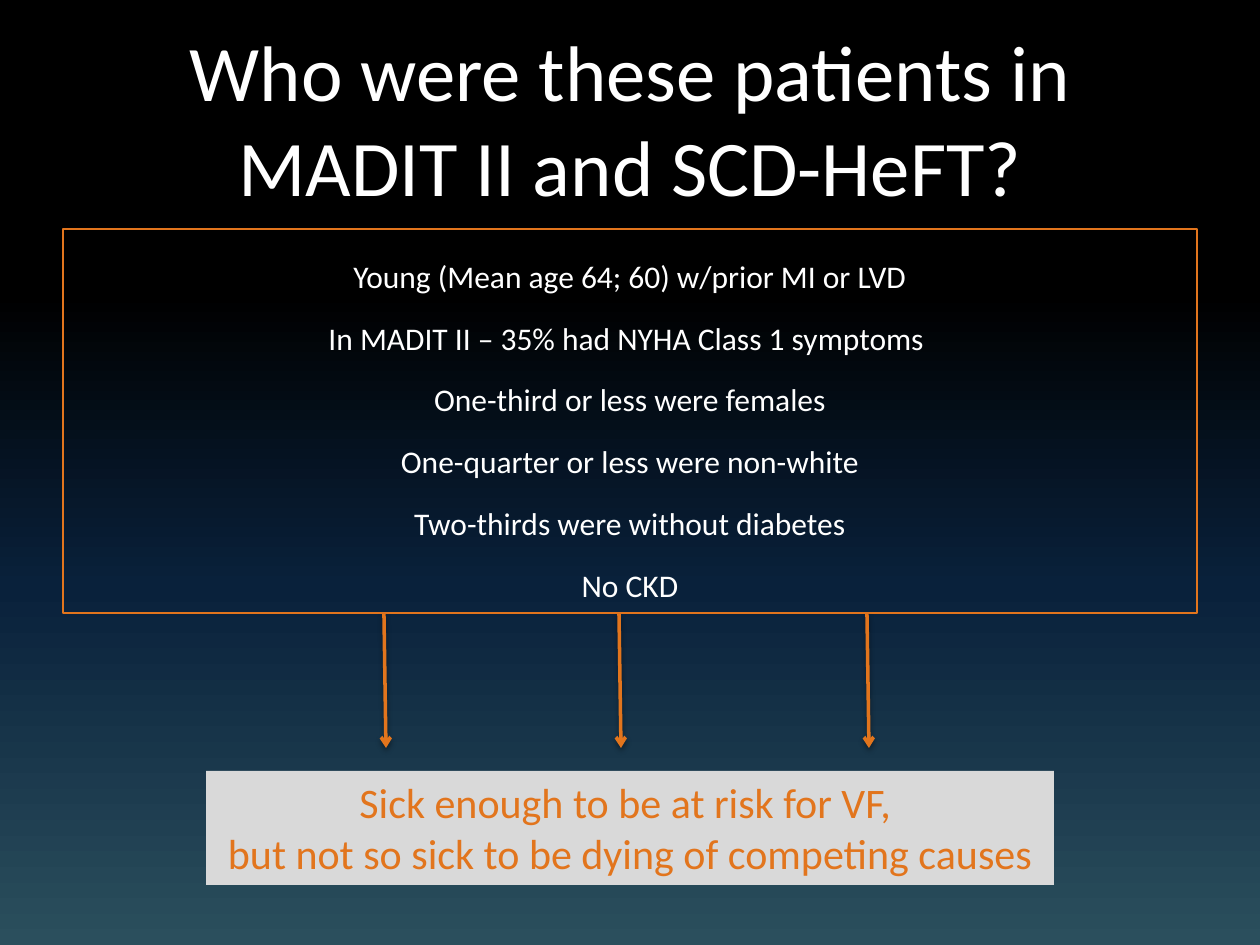
from dataclasses import dataclass

from lxml import etree
from pptx import Presentation
from pptx.dml.color import RGBColor
from pptx.enum.shapes import MSO_CONNECTOR, MSO_SHAPE
from pptx.enum.text import MSO_ANCHOR, MSO_AUTO_SIZE, PP_ALIGN
from pptx.oxml import parse_xml
from pptx.oxml.ns import nsdecls, qn
from pptx.shapes.autoshape import Shape
from pptx.slide import Slide
from pptx.util import Emu, Pt

RECTANGLE = MSO_SHAPE.RECTANGLE
STRAIGHT = MSO_CONNECTOR.STRAIGHT
CENTER = PP_ALIGN.CENTER
TOP, MIDDLE = MSO_ANCHOR.TOP, MSO_ANCHOR.MIDDLE
GROW = MSO_AUTO_SIZE.SHAPE_TO_FIT_TEXT

BLACK = RGBColor(0x00, 0x00, 0x00)
NAVY = RGBColor(0x09, 0x21, 0x3B)
TEAL = RGBColor(0x2B, 0x4F, 0x5D)
WHITE = RGBColor(0xFF, 0xFF, 0xFF)
ORANGE = RGBColor(0xE2, 0x75, 0x1D)
LIGHT_GREY = RGBColor(0xD9, 0xD9, 0xD9)

FONT = "Calibri"
PIXELS_PER_INCH = 126
BACKGROUND_STOPS = ((0, BLACK), (31, BLACK), (62, NAVY), (100, TEAL))

ARROW_LEFTS = (384, 619, 867)
ARROW_TOP, ARROW_BOTTOM, ARROW_SLANT = 614, 748, 2


@dataclass(frozen=True)
class Panel:
    left: int
    top: int
    width: int
    height: int
    lines: tuple[str, ...]
    size: int
    color: RGBColor
    fill: RGBColor | None = None
    border: RGBColor | None = None
    anchor: MSO_ANCHOR = TOP
    top_margin: int = 6
    line_spacing: float = 1.0
    space_before: int = 0
    wrap: bool = True


TITLE = Panel(63, 13, 1134, 157, ("Who were these patients in MADIT II and SCD-HeFT?",),
              45, WHITE, top_margin=10)
PATIENTS = Panel(
    63, 229, 1134, 384,
    (
        "Young (Mean age 64; 60) w/prior MI or LVD",
        "In MADIT II – 35% had NYHA Class 1 symptoms ",
        "One-third or less were females",
        "One-quarter or less were non-white",
        "Two-thirds were without diabetes",
        "No CKD",
    ),
    18, WHITE, border=ORANGE, anchor=MIDDLE, line_spacing=1.5, space_before=3,
)
CONCLUSION = Panel(
    206, 771, 848, 114,
    ("Sick enough to be at risk for VF, ", "but not so sick to be dying of competing causes"),
    24, ORANGE, fill=LIGHT_GREY, wrap=False,
)


def px(value: int) -> Emu:
    return Emu(round(value * 914400 / PIXELS_PER_INCH))


def paint_background(slide: Slide) -> None:
    fill = slide.background.fill
    fill.gradient()
    fill.gradient_angle = 270
    stop_list = slide.element.find(".//" + qn("a:gsLst"))
    for stop in list(stop_list):
        stop_list.remove(stop)
    for percent, color in BACKGROUND_STOPS:
        stop = etree.SubElement(stop_list, qn("a:gs"), pos=str(percent * 1000))
        etree.SubElement(stop, qn("a:srgbClr"), val=str(color))


def add_panel(slide: Slide, panel: Panel) -> Shape:
    shape = slide.shapes.add_shape(
        RECTANGLE, px(panel.left), px(panel.top), px(panel.width), px(panel.height))
    shape.shadow.inherit = False
    if panel.fill is None:
        shape.fill.background()
    else:
        shape.fill.solid()
        shape.fill.fore_color.rgb = panel.fill
    if panel.border is None:
        shape.line.fill.background()
    else:
        shape.line.color.rgb = panel.border
        shape.line.width = Pt(0.75)

    frame = shape.text_frame
    frame.word_wrap = panel.wrap
    frame.vertical_anchor = panel.anchor
    frame.margin_top = px(panel.top_margin)
    if not panel.wrap:
        frame.auto_size = GROW
    frame.text = "\n".join(panel.lines)
    for paragraph in frame.paragraphs:
        paragraph.alignment = CENTER
        paragraph.line_spacing = panel.line_spacing
        paragraph.space_before = Pt(panel.space_before)
        paragraph.font.name = FONT
        paragraph.font.size = Pt(panel.size)
        paragraph.font.color.rgb = panel.color
    return shape


def add_arrow(slide: Slide, left: int) -> None:
    arrow = slide.shapes.add_connector(
        STRAIGHT, px(left), px(ARROW_TOP), px(left + ARROW_SLANT), px(ARROW_BOTTOM))
    arrow.line.color.rgb = ORANGE
    arrow.line.width = Pt(2)
    etree.SubElement(arrow.line._get_or_add_ln(), qn("a:tailEnd"), type="arrow")
    # Soft shadow just below the line
    arrow.element.spPr.append(parse_xml(
        f'<a:effectLst {nsdecls("a")}>'
        f'<a:outerShdw blurRad="{Pt(3.1)}" dist="{Pt(1.6)}" dir="5400000" rotWithShape="0">'
        f'<a:srgbClr val="{BLACK}"><a:alpha val="38000"/></a:srgbClr>'
        '</a:outerShdw></a:effectLst>'))


def main() -> None:
    presentation = Presentation()
    presentation.slide_width = px(1260)
    presentation.slide_height = px(945)
    slide = presentation.slides.add_slide(presentation.slide_layouts[6])
    paint_background(slide)

    # Title and patient profile
    add_panel(slide, TITLE)
    add_panel(slide, PATIENTS)

    # Arrows leading to the conclusion
    for left in ARROW_LEFTS:
        add_arrow(slide, left)
    add_panel(slide, CONCLUSION)

    presentation.save("out.pptx")


if __name__ == "__main__":
    main()
